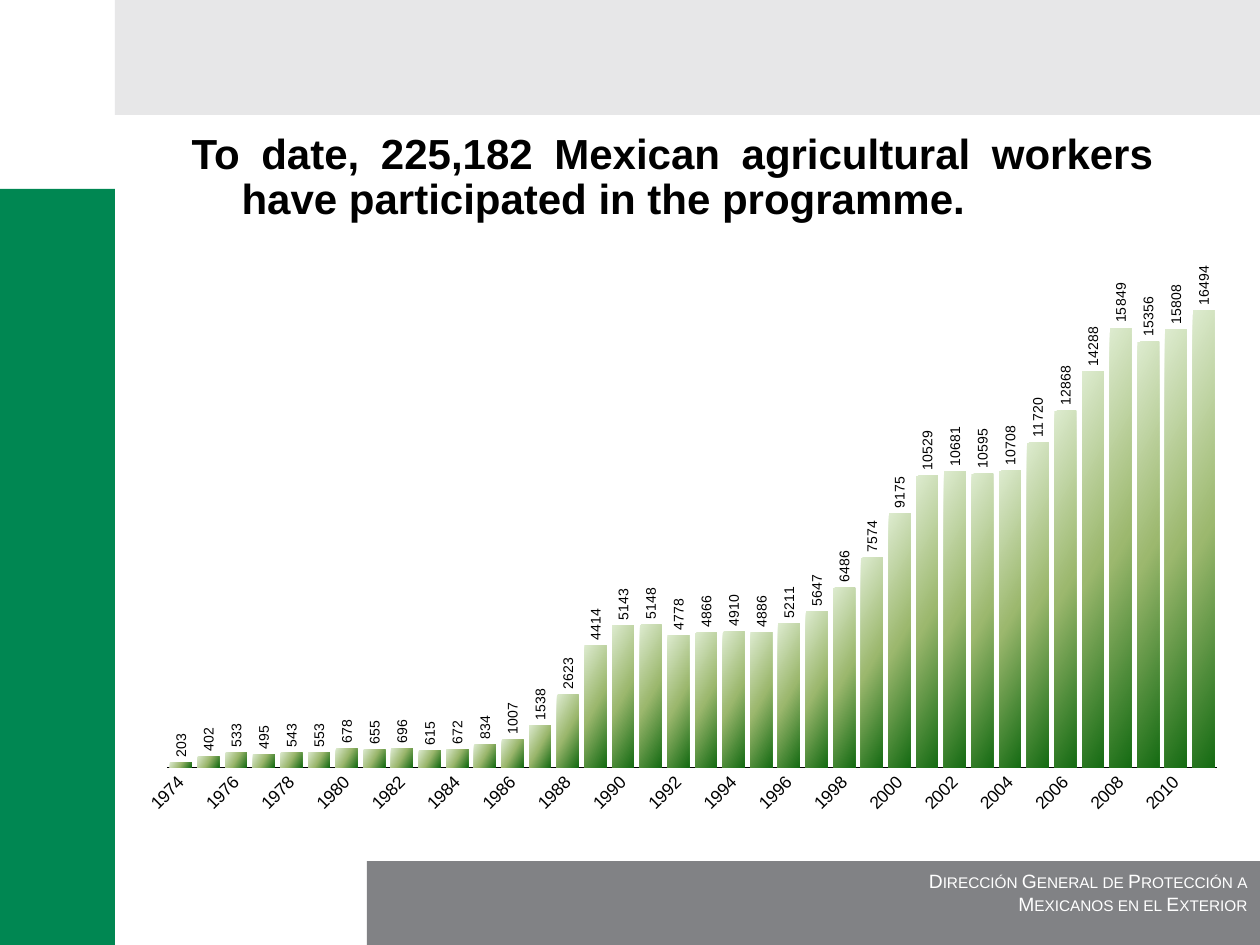
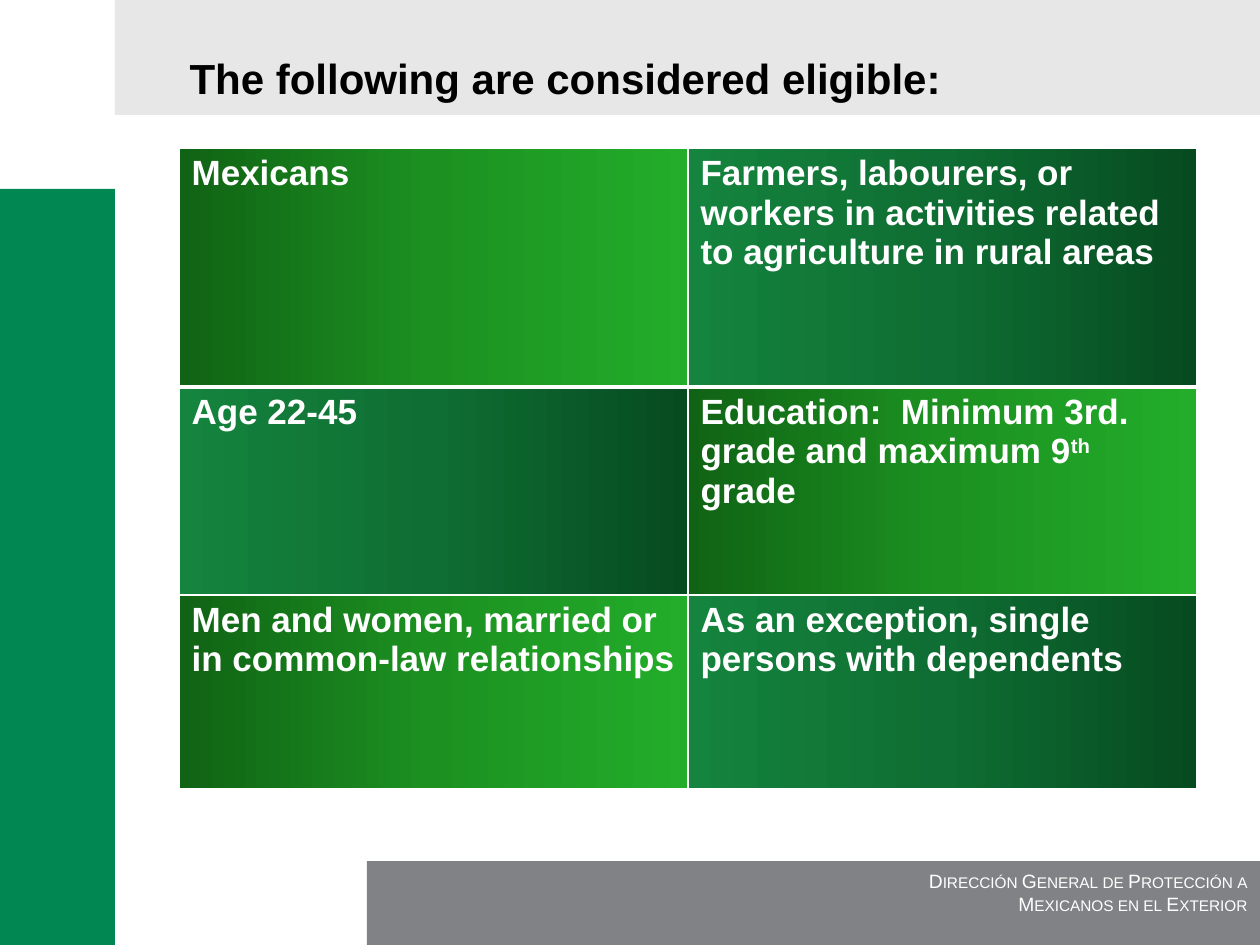
from pptx import Presentation
from pptx.chart.data import CategoryChartData
from pptx.dml.color import RGBColor
from pptx.enum.chart import XL_CHART_TYPE, XL_LABEL_POSITION, XL_TICK_MARK
from pptx.enum.shapes import MSO_SHAPE
from pptx.enum.text import MSO_ANCHOR, MSO_AUTO_SIZE, PP_ALIGN
from pptx.oxml import parse_xml
from pptx.oxml.ns import nsdecls, qn
from pptx.util import Pt

RECTANGLE = MSO_SHAPE.RECTANGLE
COLUMNS = XL_CHART_TYPE.COLUMN_CLUSTERED
OUTSIDE_END = XL_LABEL_POSITION.OUTSIDE_END
NO_TICKS = XL_TICK_MARK.NONE
TOP = MSO_ANCHOR.TOP
NO_AUTOFIT = MSO_AUTO_SIZE.NONE
JUSTIFY, RIGHT = PP_ALIGN.JUSTIFY, PP_ALIGN.RIGHT

PX_PER_INCH = 126
TITLE_ONLY = 5
COLORS = {
    "side": "008752", "footer": "818285", "header": "E7E7E8",
    "black": "000000", "white": "FFFFFF",
}
BAR_GRADIENT = (("DDEBCF", "9CB86E", "156B13"), 30)
CELL_GRADIENTS = (
    (("106314", "1C9121", "23AD2A"), 0),
    (("064B20", "0F6E33", "14843E"), 180),
)
TITLE_FORMAT = {"name": "Arial", "size": Pt(24), "bold": True}
CELL_FORMAT = {"name": "Arial", "size": Pt(20), "bold": True}
FOOTER_FORMAT = {"name": "Arial", "size": Pt(11)}
AXIS_FORMAT = {"name": "Arial", "size": Pt(10)}
LABEL_FORMAT = {"name": "Arial", "size": Pt(8)}

FOOTER_LINES = ("Dirección General de Protección a", "Mexicanos en el Exterior")
FIRST_YEAR = 1974
WORKERS = (
    203, 402, 533, 495, 543, 553, 678, 655, 696, 615, 672, 834, 1007, 1538,
    2623, 4414, 5143, 5148, 4778, 4866, 4910, 4886, 5211, 5647, 6486, 7574,
    9175, 10529, 10681, 10595, 10708, 11720, 12868, 14288, 15849, 15356,
    15808, 16494,
)
ELIGIBILITY = (
    (("Mexicans",),
     ("Farmers, labourers, or workers in activities related to agriculture in rural areas",)),
    (("Age 22-45",),
     ("Education:  Minimum 3rd. grade and maximum 9", "th", " grade")),
    (("Men and women, married or in common-law relationships",),
     ("As an exception, single persons with dependents",)),
)
ROW_HEIGHTS = (239, 208, 194)
RULE_WIDTHS = (1, 3, 1, 1)


def px(length):
    return round(length * 914400 / PX_PER_INCH)


def scaled(box):
    return [px(length) for length in box]


def format_font(font, values, color):
    for name, value in values.items():
        setattr(font, name, value)
    font.color.rgb = RGBColor.from_string(COLORS[color])


def gradient_fill(colors, angle):
    stops = "".join(
        f'<a:gs pos="{index * 50000}"><a:srgbClr val="{color}"/></a:gs>'
        for index, color in enumerate(colors)
    )
    return parse_xml(
        f'<a:gradFill {nsdecls("a")} rotWithShape="1"><a:gsLst>{stops}</a:gsLst>'
        f'<a:lin ang="{angle * 60000}" scaled="0"/></a:gradFill>'
    )


def add_band(slide, box, color):
    band = slide.shapes.add_shape(RECTANGLE, *scaled(box))
    band.shadow.inherit = False
    band.fill.solid()
    band.fill.fore_color.rgb = RGBColor.from_string(COLORS[color])
    band.line.fill.background()
    return band


def write_footer(band):
    frame = band.text_frame
    frame.word_wrap = True
    frame.vertical_anchor = TOP
    frame.margin_top = px(8)
    frame.text = "\n".join(FOOTER_LINES)
    for paragraph in frame.paragraphs:
        paragraph.alignment = RIGHT
        font = paragraph.runs[0].font
        format_font(font, FOOTER_FORMAT, "white")
        font._element.set("cap", "small")


def build_master(presentation, slide):
    side = add_band(slide, (0, 189, 115, 756), "side")
    footer = add_band(slide, (367, 861, 893, 84), "footer")
    header = add_band(slide, (115, 0, 1145, 115), "header")
    write_footer(footer)
    master_tree = presentation.slide_master.shapes.element
    for index, band in enumerate((side, footer, header)):
        band.element.nvSpPr.cNvPr.set("id", str(20 + index))
        master_tree.insert(2 + index, band.element)


def write_title(slide, box, text, margin_left, indent, margin_top=6):
    title = slide.shapes.title
    title.left, title.top, title.width, title.height = scaled(box)
    frame = title.text_frame
    frame.word_wrap = True
    frame.auto_size = NO_AUTOFIT
    frame.vertical_anchor = TOP
    frame.margin_top = px(margin_top)
    frame.text = text
    paragraph = frame.paragraphs[0]
    paragraph.alignment = JUSTIFY
    properties = paragraph._p.get_or_add_pPr()
    properties.set("marL", str(px(margin_left)))
    properties.set("indent", str(px(indent)))
    format_font(paragraph.runs[0].font, TITLE_FORMAT, "black")
    return paragraph


def add_text_shadow(run):
    shadow = parse_xml(
        f'<a:effectLst {nsdecls("a")}>'
        '<a:outerShdw blurRad="50800" dist="38100" dir="5400000">'
        '<a:srgbClr val="000000"><a:alpha val="50000"/></a:srgbClr>'
        '</a:outerShdw></a:effectLst>'
    )
    run.font._element.find(qn("a:solidFill")).addnext(shadow)


def rotate_text(element, degrees):
    body = element.find(".//" + qn("a:bodyPr"))
    body.set("rot", str(degrees * 60000))
    body.set("vert", "horz")


def place_plot(chart, x, y, width, height):
    plot_area = chart._chartSpace.chart.plotArea
    for layout in plot_area.findall(qn("c:layout")):
        plot_area.remove(layout)
    sizes = "".join(
        f'<c:{name} val="{value}"/>'
        for name, value in (("x", x), ("y", y), ("w", width), ("h", height))
    )
    plot_area.insert(0, parse_xml(
        f'<c:layout {nsdecls("c")}><c:manualLayout><c:layoutTarget val="inner"/>'
        f'<c:xMode val="edge"/><c:yMode val="edge"/>{sizes}</c:manualLayout></c:layout>'
    ))


def add_workers_chart(slide, box):
    data = CategoryChartData()
    data.categories = [str(FIRST_YEAR + index) for index in range(len(WORKERS))]
    data.add_series("Series 1", WORKERS)
    chart = slide.shapes.add_chart(COLUMNS, *scaled(box), data).chart
    chart.has_title = False
    chart.has_legend = False
    format_font(chart.font, AXIS_FORMAT, "black")
    place_plot(chart, 0.017, 0.029, 0.983, 0.881)

    value_axis = chart.value_axis
    value_axis.visible = False
    value_axis.has_major_gridlines = False
    value_axis.minimum_scale = 0
    value_axis.maximum_scale = 18000

    year_axis = chart.category_axis
    year_axis.major_tick_mark = NO_TICKS
    year_axis.format.line.width = Pt(0.75)
    year_axis.format.line.color.rgb = RGBColor.from_string(COLORS["black"])
    format_font(year_axis.tick_labels.font, AXIS_FORMAT, "black")
    rotate_text(year_axis._element.find(qn("c:txPr")), -45)
    skip = parse_xml(f'<c:tickLblSkip {nsdecls("c")} val="2"/>')
    year_axis._element.find(qn("c:lblOffset")).addnext(skip)

    plot = chart.plots[0]
    plot.gap_width = 27
    plot.vary_by_categories = False
    series = plot.series[0]
    series.invert_if_negative = False
    series._element.get_or_add_spPr().insert(0, gradient_fill(*BAR_GRADIENT))
    labels = series.data_labels
    labels.show_value = True
    labels.position = OUTSIDE_END
    format_font(labels.font, LABEL_FORMAT, "black")
    rotate_text(labels._element, -90)


def style_cell(cell, row, column):
    properties = cell._tc.get_or_add_tcPr()
    widths = {"L": 1, "R": 1, "T": RULE_WIDTHS[row], "B": RULE_WIDTHS[row + 1]}
    for side, width in widths.items():
        properties.append(parse_xml(
            f'<a:ln{side} {nsdecls("a")} w="{Pt(width)}"><a:solidFill>'
            f'<a:srgbClr val="{COLORS["white"]}"/></a:solidFill></a:ln{side}>'
        ))
    properties.append(gradient_fill(*CELL_GRADIENTS[(row + column) % 2]))


def add_eligibility_table(slide, left, top, width):
    table = slide.shapes.add_table(
        len(ELIGIBILITY), 2, *scaled((left, top, width, sum(ROW_HEIGHTS)))
    ).table
    table.first_row = False
    table.horz_banding = False
    for column in table.columns:
        column.width = px(width / 2)
    for row, (height, texts) in enumerate(zip(ROW_HEIGHTS, ELIGIBILITY)):
        table.rows[row].height = px(height)
        for column, parts in enumerate(texts):
            cell = table.cell(row, column)
            style_cell(cell, row, column)
            paragraph = cell.text_frame.paragraphs[0]
            for part in parts:
                run = paragraph.add_run()
                run.text = part
                format_font(run.font, CELL_FORMAT, "white")
                if part == "th":
                    run.font._element.set("baseline", "30000")


def build_chart_slide(slide):
    paragraph = write_title(
        slide, (179, 126, 987, 105),
        "To date, 225,182 Mexican agricultural workers have participated in the programme.",
        margin_left=50, indent=-50,
    )
    paragraph.line_spacing = Pt(26)
    add_text_shadow(paragraph.runs[0])
    add_workers_chart(slide, (147, 252, 1071, 567))


def build_eligibility_slide(slide):
    write_title(
        slide, (115, 42, 1071, 63), "The following are considered eligible:",
        margin_left=48, indent=14, margin_top=10,
    )
    add_eligibility_table(slide, 179, 148, 1018)


def main():
    presentation = Presentation()
    presentation.slide_width, presentation.slide_height = scaled((1260, 945))
    layout = presentation.slide_layouts[TITLE_ONLY]
    chart_slide = presentation.slides.add_slide(layout)
    build_master(presentation, chart_slide)
    build_chart_slide(chart_slide)
    build_eligibility_slide(presentation.slides.add_slide(layout))
    presentation.save("out.pptx")


if __name__ == "__main__":
    main()
